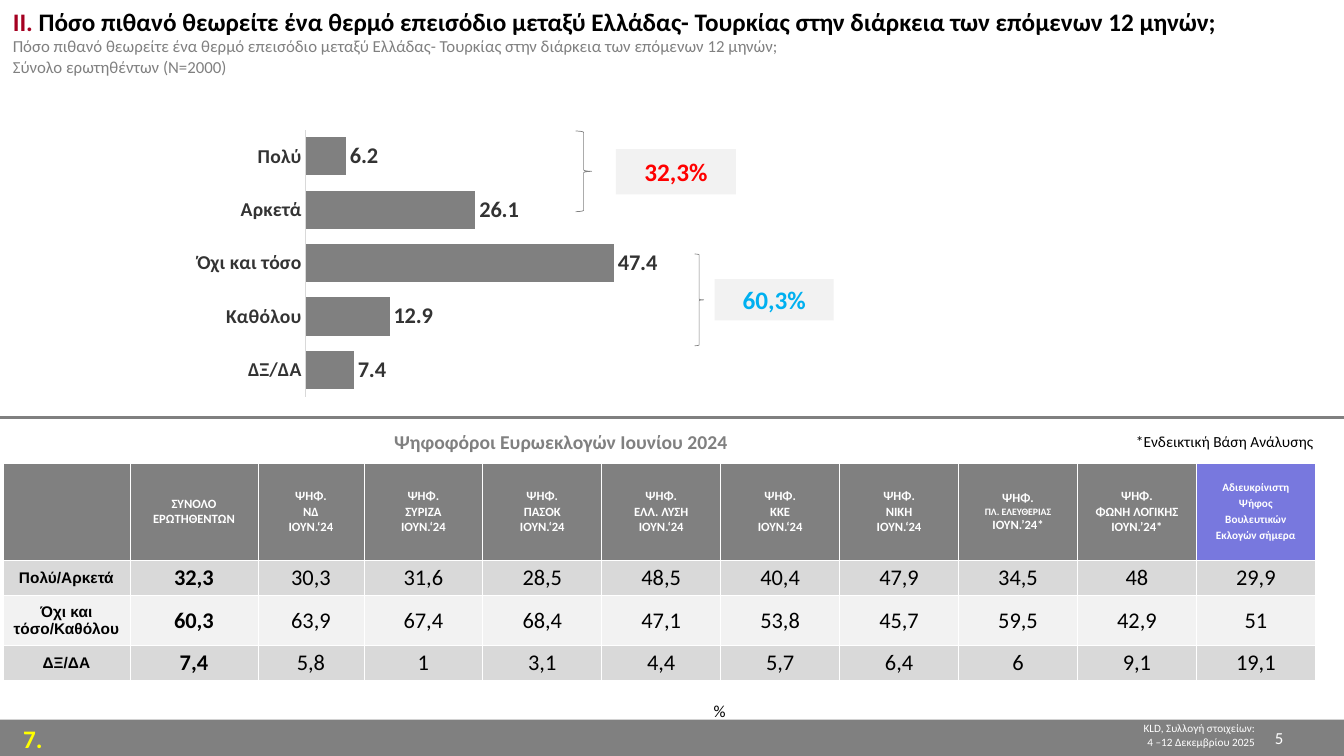
from dataclasses import dataclass

import lxml.etree
import pptx
import pptx.chart.data
import pptx.dml.color
import pptx.enum.chart
import pptx.enum.shapes
import pptx.enum.text
import pptx.oxml
import pptx.oxml.ns
import pptx.util

ALIGN = pptx.enum.text.PP_ALIGN
ANCHOR = pptx.enum.text.MSO_ANCHOR
SHAPE = pptx.enum.shapes.MSO_SHAPE
SLIDE_WIDTH, SLIDE_HEIGHT = pptx.util.Inches(13.33), pptx.util.Inches(7.5)


@dataclass(frozen=True)
class Theme:
    font: str = "Calibri"
    label_font: str = "Arial"
    gray: str = "808080"
    white: str = "FFFFFF"
    black: str = "000000"
    dark: str = "333333"
    axis: str = "D9D9D9"
    light: str = "F2F2F2"
    violet: str = "7878DE"
    crimson: str = "A50021"
    red: str = "FF0000"
    blue: str = "00B0F0"
    yellow: str = "FFFF00"
    tiny: int = 7
    small: int = 8
    header: int = 9
    note: int = 11
    body: int = 12
    caption: int = 14
    value: int = 16
    title: int = 18


THEME = Theme()


@dataclass(frozen=True)
class Box:
    """Place and size in percent of the slide's width and height."""
    left: float
    top: float
    width: float
    height: float

    def emu(self) -> tuple[int, int, int, int]:
        return across(self.left), down(self.top), across(self.width), down(self.height)


@dataclass(frozen=True)
class Span:
    text: str
    size: float
    color: str
    bold: bool = False
    font: str = THEME.font


@dataclass(frozen=True)
class Label:
    box: Box
    lines: tuple[tuple[Span, ...], ...]
    align: ALIGN = ALIGN.LEFT
    fill: str | None = None
    wrap: bool = True
    anchor: ANCHOR = ANCHOR.TOP


def across(percent: float) -> int:
    return round(SLIDE_WIDTH * percent / 100)


def down(percent: float) -> int:
    return round(SLIDE_HEIGHT * percent / 100)


def rgb(color: str) -> pptx.dml.color.RGBColor:
    return pptx.dml.color.RGBColor.from_string(color)


def style_font(font, size: float, color: str, bold: bool, name: str = THEME.font) -> None:
    font.size, font.bold, font.name = pptx.util.Pt(size), bold, name
    font.color.rgb = rgb(color)


def write(frame, lines, align: ALIGN, space_before: float = 0) -> None:
    for index, spans in enumerate(lines):
        paragraph = frame.add_paragraph() if index else frame.paragraphs[0]
        paragraph.text = spans[0].text
        for span in spans[1:]:
            paragraph.add_run().text = span.text
        paragraph.alignment = align
        if index and space_before:
            paragraph.space_before = pptx.util.Pt(space_before)
        for run, span in zip(paragraph.runs, spans):
            style_font(run.font, span.size, span.color, span.bold, span.font)


def add_label(slide, label: Label) -> None:
    if label.fill:
        shape = slide.shapes.add_shape(SHAPE.RECTANGLE, *label.box.emu())
        shape.shadow.inherit = False
        shape.fill.solid()
        shape.fill.fore_color.rgb = rgb(label.fill)
        shape.line.fill.background()
    else:
        shape = slide.shapes.add_textbox(*label.box.emu())
    shape.text_frame.word_wrap = label.wrap
    shape.text_frame.vertical_anchor = label.anchor
    write(shape.text_frame, label.lines, label.align)


def add_brace(slide, box: Box) -> None:
    brace = slide.shapes.add_shape(SHAPE.RIGHT_BRACE, *box.emu())
    brace.shadow.inherit = False
    brace.fill.background()
    brace.line.color.rgb = rgb(THEME.gray)
    brace.line.width = pptx.util.Pt(0.5)


def add_divider(slide, top: float) -> None:
    line = slide.shapes.add_connector(
        pptx.enum.shapes.MSO_CONNECTOR.STRAIGHT, 0, down(top), SLIDE_WIDTH, down(top))
    line.line.color.rgb = rgb(THEME.gray)
    line.line.width = pptx.util.Pt(2.25)
    lxml.etree.SubElement(line._element.spPr, pptx.oxml.ns.qn("a:effectLst"))


def add_answer_chart(slide, box: Box, answers: dict[str, float]) -> None:
    data = pptx.chart.data.CategoryChartData()
    data.categories = list(answers)
    data.add_series("Series 1", list(answers.values()))
    chart = slide.shapes.add_chart(
        pptx.enum.chart.XL_CHART_TYPE.BAR_CLUSTERED, *box.emu(), data).chart
    chart.has_legend = chart.has_title = False
    style_font(chart.font, THEME.caption, THEME.black, True)
    # Axes
    category, value = chart.category_axis, chart.value_axis
    category.reverse_order = True
    category.major_tick_mark = pptx.enum.chart.XL_TICK_MARK.NONE
    category.format.line.color.rgb = rgb(THEME.axis)
    category.format.line.width = pptx.util.Pt(0.75)
    style_font(category.tick_labels.font, THEME.caption, THEME.dark, True)
    value.minimum_scale, value.maximum_scale, value.major_unit = 0, 100, 20
    value.has_major_gridlines = value.visible = False
    # Bars and their values
    plot = chart.plots[0]
    plot.gap_width, plot.overlap, plot.vary_by_categories = 40, -51, False
    series = plot.series[0]
    series.format.fill.solid()
    series.format.fill.fore_color.rgb = rgb(THEME.gray)
    labels = series.data_labels
    labels.show_value = True
    labels.position = pptx.enum.chart.XL_LABEL_POSITION.OUTSIDE_END
    style_font(labels.font, THEME.value, THEME.dark, True)
    # Inner plot area, as shares of the chart
    area = chart._chartSpace.chart.plotArea
    for old in area.findall(pptx.oxml.ns.qn("c:layout")):
        area.remove(old)
    parts = (("layoutTarget", "inner"), ("xMode", "edge"), ("yMode", "edge"),
             ("x", 0.14), ("y", 0.12), ("w", 0.77), ("h", 0.8))
    settings = "".join(f'<c:{name} val="{setting}"/>' for name, setting in parts)
    area.insert(0, pptx.oxml.parse_xml(
        f'<c:layout {pptx.oxml.ns.nsdecls("c")}><c:manualLayout>{settings}</c:manualLayout></c:layout>'))


def fill_cell(cell, fill: str, lines, inset: float, space_before: float = 0) -> None:
    cell.fill.solid()
    cell.fill.fore_color.rgb = rgb(fill)
    cell.vertical_anchor = ANCHOR.MIDDLE
    cell.margin_left = cell.margin_right = pptx.util.Inches(inset)
    cell.margin_top = cell.margin_bottom = pptx.util.Inches(inset / 2)
    for index, side in enumerate("LRTB"):
        cell._tc.tcPr.insert(index, pptx.oxml.parse_xml(
            f'<a:ln{side} {pptx.oxml.ns.nsdecls("a")} w="6350"><a:solidFill>'
            f'<a:srgbClr val="{THEME.white}"/></a:solidFill></a:ln{side}>'))
    write(cell.text_frame, lines, ALIGN.CENTER, space_before)


def add_voter_table(slide, left: float, top: float) -> None:
    widths = [9.45, 9.53, 7.88] + [8.85] * 8
    heights = [12.8, 4.6, 6.67, 4.6]
    box = Box(left, top, sum(widths), sum(heights))
    table = slide.shapes.add_table(len(heights), len(widths), *box.emu()).table
    table.first_row = table.horz_banding = False
    for column, width in zip(table.columns, widths):
        column.width = across(width)
    for row, height in zip(table.rows, heights):
        row.height = down(height)
    # Header row
    parties = (("NΔ", "‘24"), ("ΣΥΡΙΖΑ", "‘24"), ("ΠΑΣΟΚ", "‘24"), ("ΕΛΛ. ΛΥΣΗ", "‘24"), ("ΚΚΕ", "‘24"),
               ("ΝΙΚΗ", "‘24"), ("ΠΛ. ΕΛΕΥΘΕΡΙΑΣ", "’24*"), ("ΦΩΝΗ ΛΟΓΙΚΗΣ", "’24*"))
    undecided = ("Αδιευκρίνιστη", "Ψήφος", "Βουλευτικών", "Εκλογών σήμερα")
    headers = [(), ("ΣΥΝΟΛΟ", "ΕΡΩΤΗΘΕΝΤΩΝ"),
               *(("ΨΗΦ.", party, f"ΙΟΥΝ.{year}") for party, year in parties), undecided]
    for column, header in enumerate(headers):
        last = header is undecided
        size = THEME.small if last else THEME.header
        lines = [(Span(text, THEME.tiny if text.startswith("ΠΛ.") else size, THEME.white, True),)
                 for text in header]
        fill_cell(table.cell(0, column), THEME.violet if last else THEME.gray, lines, 0.1, 1.6 if last else 0)
    # Answer rows
    answers = (("Πολύ/Αρκετά", "32,3 30,3 31,6 28,5 48,5 40,4 47,9 34,5 48 29,9"),
               ("Όχι και τόσο/Καθόλου", "60,3 63,9 67,4 68,4 47,1 53,8 45,7 59,5 42,9 51"),
               ("ΔΞ/ΔΑ", "7,4 5,8 1 3,1 4,4 5,7 6,4 6 9,1 19,1"))
    for row, (answer, shares) in enumerate(answers, start=1):
        spans = [Span(answer, THEME.note, THEME.black, True, THEME.label_font)]
        spans += [Span(share, THEME.value, THEME.black, index == 0) for index, share in enumerate(shares.split())]
        for column, span in enumerate(spans):
            fill_cell(table.cell(row, column), THEME.axis if row % 2 else THEME.light, [(span,)], 0.01)


def main() -> None:
    presentation = pptx.Presentation()
    presentation.slide_width, presentation.slide_height = SLIDE_WIDTH, SLIDE_HEIGHT
    slide = presentation.slides.add_slide(presentation.slide_layouts[6])
    t = THEME
    question = "Πόσο πιθανό θεωρείτε ένα θερμό επεισόδιο μεταξύ Ελλάδας- Τουρκίας στην διάρκεια των επόμενων 12 μηνών;"
    badge = {"align": ALIGN.CENTER, "fill": t.light, "wrap": False, "anchor": ANCHOR.MIDDLE}
    labels = (
        # Footer
        Label(Box(0, 95.2, 100, 4.8), (), fill=t.gray),
        Label(Box(72.45, 94.8, 21.68, 4.93), tuple((Span(text, t.small, t.white),) for text in (
            "KLD, Συλλογή στοιχείων:", "4 –12 Δεκεμβρίου 2025")), ALIGN.RIGHT),
        Label(Box(0.98, 95.07, 5.03, 5.33), ((Span("7.", t.title, t.yellow, True),),)),
        Label(Box(52.35, 92, 2.4, 4), ((Span("%", t.body, t.black),),), wrap=False),
        Label(Box(75.38, 95.6, 20.85, 6.67), ((Span("5", t.body, t.white),),), ALIGN.RIGHT),
        # Heading
        Label(Box(0.22, 0.13, 92.93, 12.13), (
            (Span("ΙΙ. ", t.title, t.crimson, True), Span(question, t.title, t.black, True)),
            (Span(question, t.body, t.gray),),
            (Span("Σύνολο ερωτηθέντων (Ν=2000)", t.body, t.gray),)), fill=t.white),
        # Sums beside the braces
        Label(Box(45.83, 19.73, 8.93, 6), ((Span("32,3%", t.title, t.red, True),),), **badge),
        Label(Box(53.18, 36.93, 8.85, 5.47), ((Span("60,3%", t.title, t.blue, True),),), **badge),
        # Table caption and note
        Label(Box(28.58, 56.27, 49.43, 4.53), (
            (Span("Ψηφοφόροι Ευρωεκλογών Ιουνίου 2024", t.caption, t.gray, True),),)),
        Label(Box(83.78, 56.53, 15.08, 3.87), (
            (Span("*Ενδεικτική Βάση Ανάλυσης", t.note, t.black),),), wrap=False),
    )
    for label in labels[:6]:
        add_label(slide, label)
    add_answer_chart(slide, Box(13.95, 11.87, 62.85, 44.13), {
        "Πολύ": 6.2, "Αρκετά": 26.1, "Όχι και τόσο": 47.4, "Καθόλου": 12.9, "ΔΞ/ΔΑ": 7.4})
    for box in (Box(42.83, 17.33, 1.2, 10.67), Box(51.68, 33.6, 0.68, 12.13)):
        add_brace(slide, box)
    add_divider(slide, 55.2)
    add_voter_table(slide, 0.22, 61.33)
    for label in labels[6:]:
        add_label(slide, label)
    presentation.save("out.pptx")


if __name__ == "__main__":
    main()
